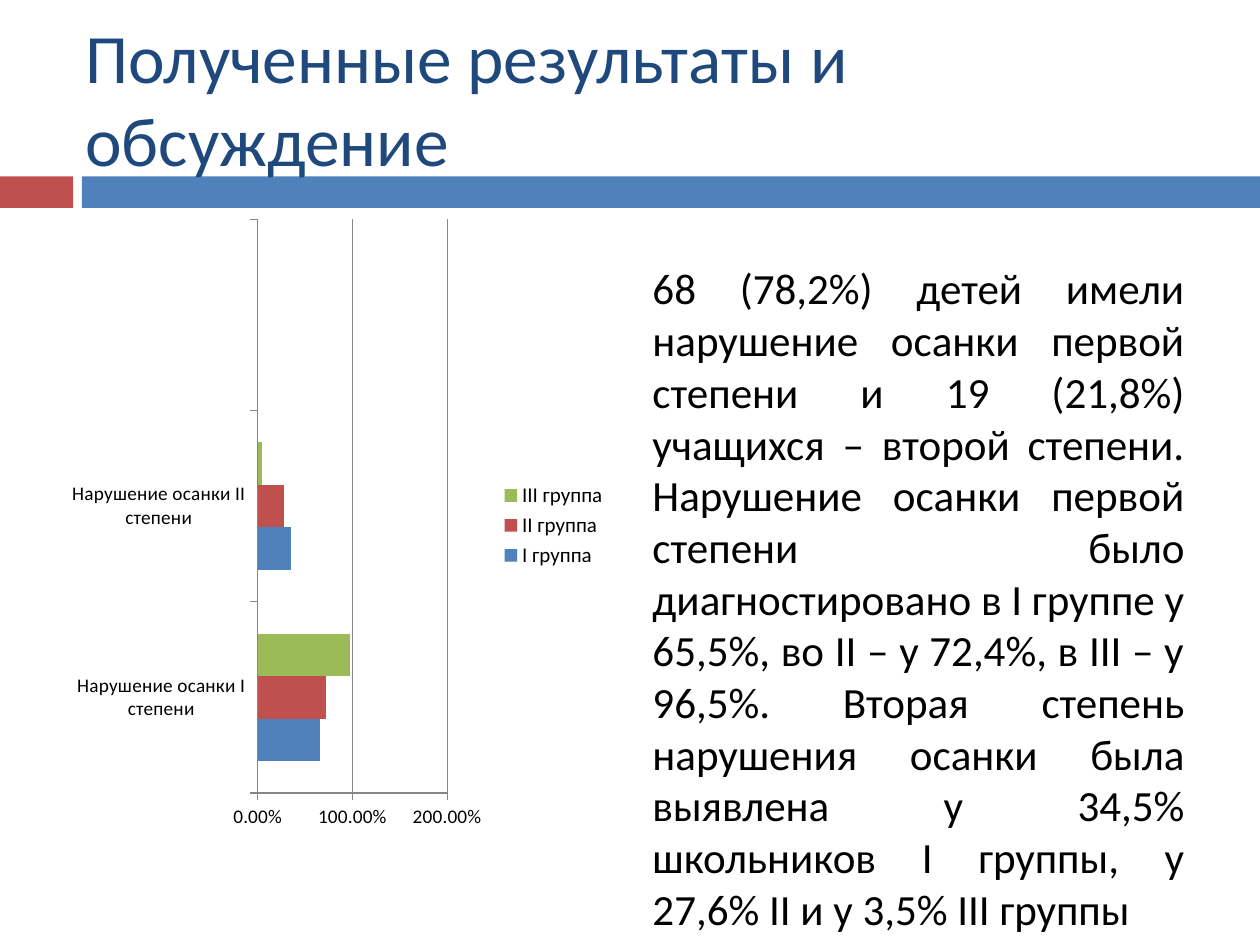
from lxml.etree import SubElement
from pptx import Presentation
from pptx.chart.data import CategoryChartData
from pptx.dml.color import RGBColor
from pptx.enum.chart import XL_CHART_TYPE, XL_LEGEND_POSITION, XL_TICK_MARK
from pptx.enum.shapes import MSO_SHAPE
from pptx.enum.text import MSO_ANCHOR, PP_ALIGN
from pptx.oxml.ns import qn
from pptx.util import Inches, Pt

COLORS = {
    "red": "C0504D",
    "blue": "4F81BD",
    "green": "9BBB59",
    "navy": "1F497D",
    "black": "000000",
    "gray": "868686",
}


class SlideBuilder:
    """Holds the style and the page being filled."""

    font = "Calibri"

    def __init__(self, page):
        self.page = page

    def color(self, name):
        return RGBColor.from_string(COLORS[name])

    def style_font(self, font, size, color="black"):
        font.name = self.font
        font.size = Pt(size)
        font.color.rgb = self.color(color)

    def band(self, left, top, width, height, color):
        shape = self.page.shapes.add_shape(
            MSO_SHAPE.RECTANGLE, Inches(left), Inches(top), Inches(width), Inches(height))
        shape.shadow.inherit = False
        shape.fill.solid()
        shape.fill.fore_color.rgb = self.color(color)
        shape.line.fill.background()

    def text(self, left, top, width, height, words, size, color="black",
             align=PP_ALIGN.LEFT, anchor=MSO_ANCHOR.TOP, space_before=0):
        box = self.page.shapes.add_textbox(
            Inches(left), Inches(top), Inches(width), Inches(height))
        frame = box.text_frame
        frame.word_wrap = True
        frame.vertical_anchor = anchor
        para = frame.paragraphs[0]
        para.alignment = align
        para.space_before = Pt(space_before)
        span = para.add_run()
        span.text = words
        self.style_font(span.font, size, color)

    def bar_chart(self, left, top, width, height, categories, series, plot_area):
        data = CategoryChartData(number_format="0.00%")
        data.categories = categories
        for name, values, _ in series:
            data.add_series(name, values)
        chart = self.page.shapes.add_chart(
            XL_CHART_TYPE.BAR_CLUSTERED, Inches(left), Inches(top),
            Inches(width), Inches(height), data).chart
        self.style_font(chart.font, 18)
        chart.has_title = False

        # Bars
        plot = chart.plots[0]
        plot.vary_by_categories = False
        plot.gap_width = 150
        for bars, (_, _, color) in zip(plot.series, series):
            bars.format.fill.solid()
            bars.format.fill.fore_color.rgb = self.color(color)

        # Axes
        for axis in (chart.category_axis, chart.value_axis):
            self.style_font(axis.tick_labels.font, 11)
            axis.major_tick_mark = XL_TICK_MARK.OUTSIDE
            axis.format.line.color.rgb = self.color("gray")
        value_axis = chart.value_axis
        value_axis.minimum_scale, value_axis.maximum_scale = 0, 2
        value_axis.major_unit = 1
        value_axis.has_major_gridlines = True
        value_axis.major_gridlines.format.line.color.rgb = self.color("gray")
        value_axis.tick_labels.number_format = "0.00%"
        value_axis.tick_labels.number_format_is_linked = False

        # Legend
        chart.has_legend = True
        chart.legend.position = XL_LEGEND_POSITION.RIGHT
        chart.legend.include_in_layout = False
        self.style_font(chart.legend.font, 12)

        self.place_plot(chart, plot_area)

    def place_plot(self, chart, plot_area):
        area = chart._chartSpace.chart.plotArea
        for old in area.findall(qn("c:layout")):
            area.remove(old)
        layout = SubElement(area, qn("c:layout"))
        area.insert(0, layout)
        manual = SubElement(layout, qn("c:manualLayout"))
        settings = [("layoutTarget", "inner"), ("xMode", "edge"), ("yMode", "edge")]
        settings += zip("xywh", plot_area)
        for tag, value in settings:
            SubElement(manual, qn(f"c:{tag}")).set("val", str(value))


def main():
    deck = Presentation()
    deck.slide_width, deck.slide_height = Inches(10), Inches(7.5)
    builder = SlideBuilder(deck.slides.add_slide(deck.slide_layouts[6]))

    # Header bands
    builder.band(0, 1.4, 0.58, 0.25, "red")
    builder.band(0.65, 1.4, 9.35, 0.25, "blue")

    # Title
    builder.text(0.58, 0.3, 8.92, 0.95, "Полученные результаты и обсуждение",
                 39.6, "navy", anchor=MSO_ANCHOR.MIDDLE)

    # Posture disorders by group, with an empty third category
    builder.bar_chart(
        0.5, 1.64, 4.42, 5.06,
        ["Нарушение осанки I степени", "Нарушение осанки II степени", ""],
        [("I группа", (0.66, 0.35, None), "blue"),
         ("II группа", (0.72, 0.28, None), "red"),
         ("III группа", (0.97, 0.04, None), "green")],
        plot_area=(0.35, 0.02, 0.34, 0.9))

    # Findings
    builder.text(
        5.08, 2.03, 4.42, 4.67,
        "68 (78,2%) детей имели нарушение осанки первой степени и 19 (21,8%) "
        "учащихся – второй степени. Нарушение осанки первой степени было "
        "диагностировано в I группе у 65,5%, во II – у 72,4%, в III – у 96,5%. "
        "Вторая степень нарушения осанки была выявлена у 34,5% школьников "
        "I группы, у 27,6% II и у 3,5% III группы",
        24.6, align=PP_ALIGN.JUSTIFY, space_before=7)

    deck.save("out.pptx")


if __name__ == "__main__":
    main()
